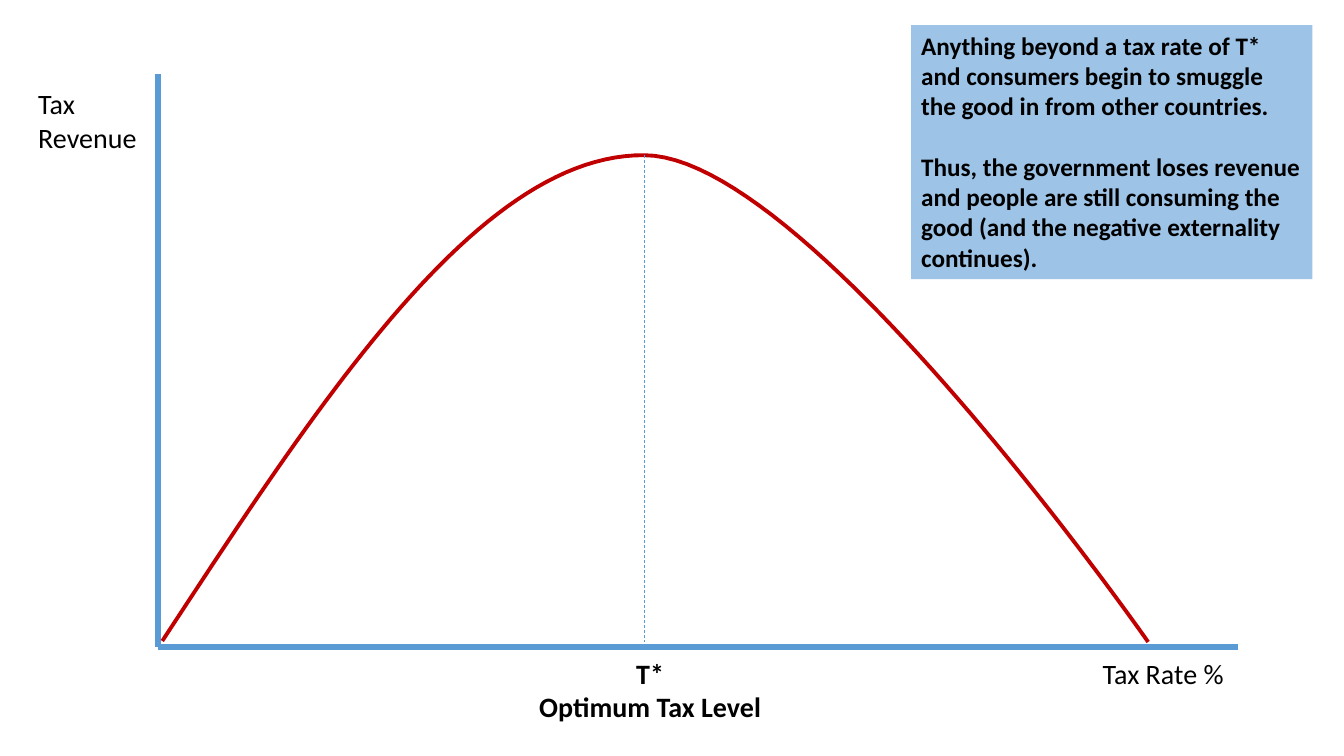
import pptx
import pptx.util
import pptx.dml.color
import pptx.enum.dml
import pptx.enum.shapes
import pptx.enum.text
import pptx.oxml.ns
import lxml.etree

Pt = pptx.util.Pt
BLUE = pptx.dml.color.RGBColor(0x5B, 0x9B, 0xD5)
PALE_BLUE = pptx.dml.color.RGBColor(0x9D, 0xC3, 0xE6)
RED = pptx.dml.color.RGBColor(0xC0, 0x00, 0x00)
BLACK = pptx.dml.color.RGBColor(0x00, 0x00, 0x00)
LEFT = pptx.enum.text.PP_ALIGN.LEFT
CENTER = pptx.enum.text.PP_ALIGN.CENTER


def add_line(start, end, weight):
    line = page.shapes.add_connector(
        pptx.enum.shapes.MSO_CONNECTOR.STRAIGHT,
        Pt(start[0]), Pt(start[1]), Pt(end[0]), Pt(end[1]))
    line.line.color.rgb = BLUE
    line.line.width = Pt(weight)
    properties = line._element.spPr
    lxml.etree.SubElement(properties, pptx.oxml.ns.qn("a:effectLst"))
    return line


def write_text(box, text, size, bold, align):
    frame = box.text_frame
    frame.word_wrap = False
    frame.vertical_anchor = pptx.enum.text.MSO_ANCHOR.TOP
    frame.text = text
    for para in frame.paragraphs:
        para.alignment = align
        for span in para.runs:
            span.font.name = "Calibri"
            span.font.size = Pt(size)
            span.font.bold = bold
            span.font.color.rgb = BLACK


deck = pptx.Presentation()
deck.slide_width = Pt(960)
deck.slide_height = Pt(540)
page = deck.slides.add_slide(deck.slide_layouts[6])

origin = (113, 462.2)
add_line((113, 52.6), origin, 4)
add_line(origin, (884.2, 462.2), 4)

peak = (460.1, 110.9)
curve_start = (115.9, 457.9)
curve_end = (820.1, 458.6)
segments = [
    (curve_start, (229.7, 284.4), (342.7, 110.2), peak),
    (peak, (577.4, 110.9), curve_end, curve_end),
]
steps = 50
curve_points = []
for segment in segments:
    for step in range(1, steps + 1):
        t = step / steps
        weights = ((1 - t) ** 3, 3 * t * (1 - t) ** 2, 3 * t ** 2 * (1 - t), t ** 3)
        x = sum(weight * point[0] for weight, point in zip(weights, segment))
        y = sum(weight * point[1] for weight, point in zip(weights, segment))
        curve_points.append((Pt(x), Pt(y)))
builder = page.shapes.build_freeform(Pt(curve_start[0]), Pt(curve_start[1]))
builder.add_line_segments(curve_points, close=False)
revenue_curve = builder.convert_to_shape()
revenue_curve.shadow.inherit = False
revenue_curve.fill.background()
revenue_curve.line.color.rgb = RED
revenue_curve.line.width = Pt(2.75)

optimum_line = add_line(peak, (peak[0], 458.6), 0.5)
optimum_line.line.dash_style = pptx.enum.dml.MSO_LINE.DASH

labels = [
    ("Tax\vRevenue", 20.2, 58.3, 85.7, 55.4, False, LEFT),
    ("Tax Rate %", 780.5, 465.1, 101.5, 31.7, False, LEFT),
    ("T*\vOptimum Tax Level", 377.3, 465.1, 174.2, 55.4, True, CENTER),
]
for text, left, top, width, height, bold, align in labels:
    label = page.shapes.add_textbox(Pt(left), Pt(top), Pt(width), Pt(height))
    write_text(label, text, 20, bold, align)

note = page.shapes.add_shape(
    pptx.enum.shapes.MSO_SHAPE.RECTANGLE, Pt(650.9), Pt(18), Pt(286.6), Pt(181.4))
note.shadow.inherit = False
note.fill.solid()
note.fill.fore_color.rgb = PALE_BLUE
note.line.fill.background()
note_text = (
    "Anything beyond a tax rate of T*\vand consumers begin to smuggle\v"
    "the good in from other countries.\n"
    "Thus, the government loses revenue\vand people are still consuming the\v"
    "good (and the negative externality\vcontinues).")
write_text(note, note_text, 18, True, LEFT)
note.text_frame.paragraphs[1].space_before = Pt(21.6)

deck.save("out.pptx")
